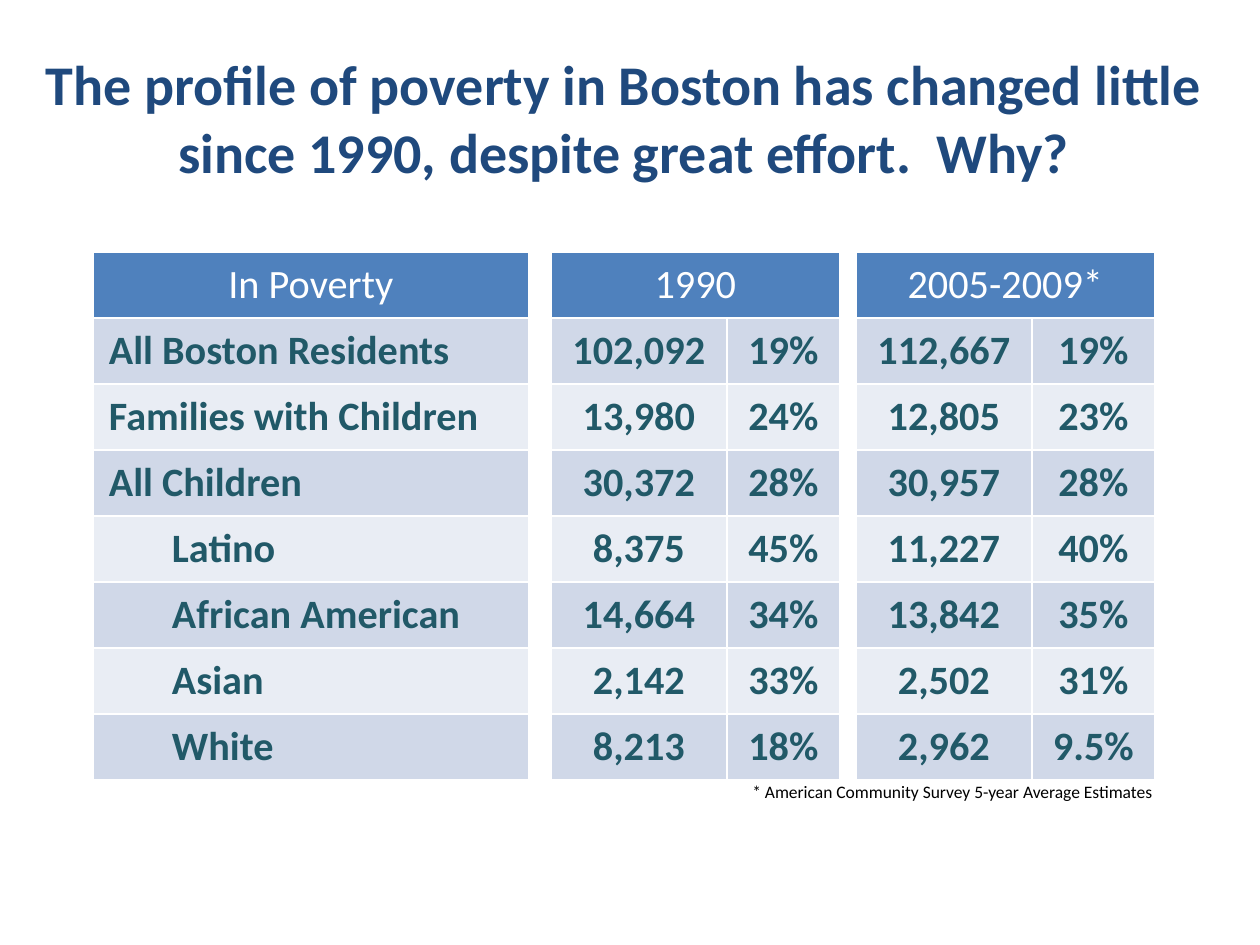
"""Build a slide comparing poverty in Boston in 1990 and 2005-2009."""
import pptx
import pptx.dml.color
import pptx.enum.text
import pptx.oxml
import pptx.oxml.ns
import pptx.util

ALIGN = pptx.enum.text.PP_ALIGN
ANCHOR = pptx.enum.text.MSO_ANCHOR


def px(n):
    return pptx.util.Emu(n * 914400 // 126)


def write(tf, text, color, align, **font):
    p = tf.paragraphs[0]
    p.alignment = align
    r = p.add_run()
    r.text = text
    r.font.color.rgb = pptx.dml.color.RGBColor.from_string(color)
    for name, value in {"name": "Calibri", **font}.items():
        setattr(r.font, name, value)
    return p


prs = pptx.Presentation()
prs.slide_width, prs.slide_height = px(1260), px(945)
s = prs.slides.add_slide(prs.slide_layouts[6])

tf = s.shapes.add_textbox(px(10), px(38), px(1228), px(158)).text_frame
tf.word_wrap = True
tf.vertical_anchor = ANCHOR.MIDDLE
write(tf, "The profile of poverty in Boston has changed little since 1990, despite great effort.  Why?",
      "1F497D", ALIGN.CENTER, size=pptx.util.Pt(32), bold=True)

groups = ["Latino", "African American", "Asian", "White"]
tables = [
    (93, [436], [["In Poverty"], ["All Boston Residents"], ["Families with Children"],
                 ["All Children"], *([g] for g in groups)]),
    (551, [176, 113], [["1990", ""], ["102,092", "19%"], ["13,980", "24%"], ["30,372", "28%"],
                       ["8,375", "45%"], ["14,664", "34%"], ["2,142", "33%"], ["8,213", "18%"]]),
    (856, [176, 123], [["2005-2009*", ""], ["112,667", "19%"], ["12,805", "23%"], ["30,957", "28%"],
                       ["11,227", "40%"], ["13,842", "35%"], ["2,502", "31%"], ["2,962", "9.5%"]]),
]
margins = {"margin_left": px(16), "margin_right": px(16), "margin_top": px(8), "margin_bottom": px(8)}
border = ('<a:{} {} w="12700"><a:solidFill><a:srgbClr val="FFFFFF"/></a:solidFill></a:{}>')

for left, widths, rows in tables:
    table = s.shapes.add_table(len(rows), len(widths), px(left), px(252),
                               px(sum(widths)), px(66 * len(rows))).table
    for column, width in zip(table.columns, widths):
        column.width = px(width)
    for i, row in enumerate(rows):
        table.rows[i].height = px(66)
        for j, text in enumerate(row):
            cell = table.cell(i, j)
            for name, value in margins.items():
                setattr(cell, name, value)
            for side in ("lnL", "lnR", "lnT", "lnB"):
                cell._tc.get_or_add_tcPr().append(pptx.oxml.parse_xml(
                    border.format(side, pptx.oxml.ns.nsdecls("a"), side)))
            cell.fill.solid()
            fill = "4F81BD" if i == 0 else "D0D8E8" if i % 2 else "E9EDF4"
            cell.fill.fore_color.rgb = pptx.dml.color.RGBColor.from_string(fill)
            if text:
                label = i > 0 and len(widths) == 1
                p = write(cell.text_frame, text, "215968" if i else "FFFFFF",
                          ALIGN.LEFT if label else ALIGN.CENTER,
                          size=pptx.util.Pt(23), bold=i > 0)
                if text in groups:
                    p.level = 1
                    p._p.get_or_add_pPr().set("marL", str(px(63)))
    if len(widths) > 1:
        table.cell(0, 0).merge(table.cell(0, 1))

tf = s.shapes.add_textbox(px(740), px(775), px(437), px(34)).text_frame
tf.word_wrap = False
write(tf, "* American Community Survey 5-year Average Estimates", "000000", ALIGN.LEFT,
      size=pptx.util.Pt(10))

prs.save("out.pptx")
